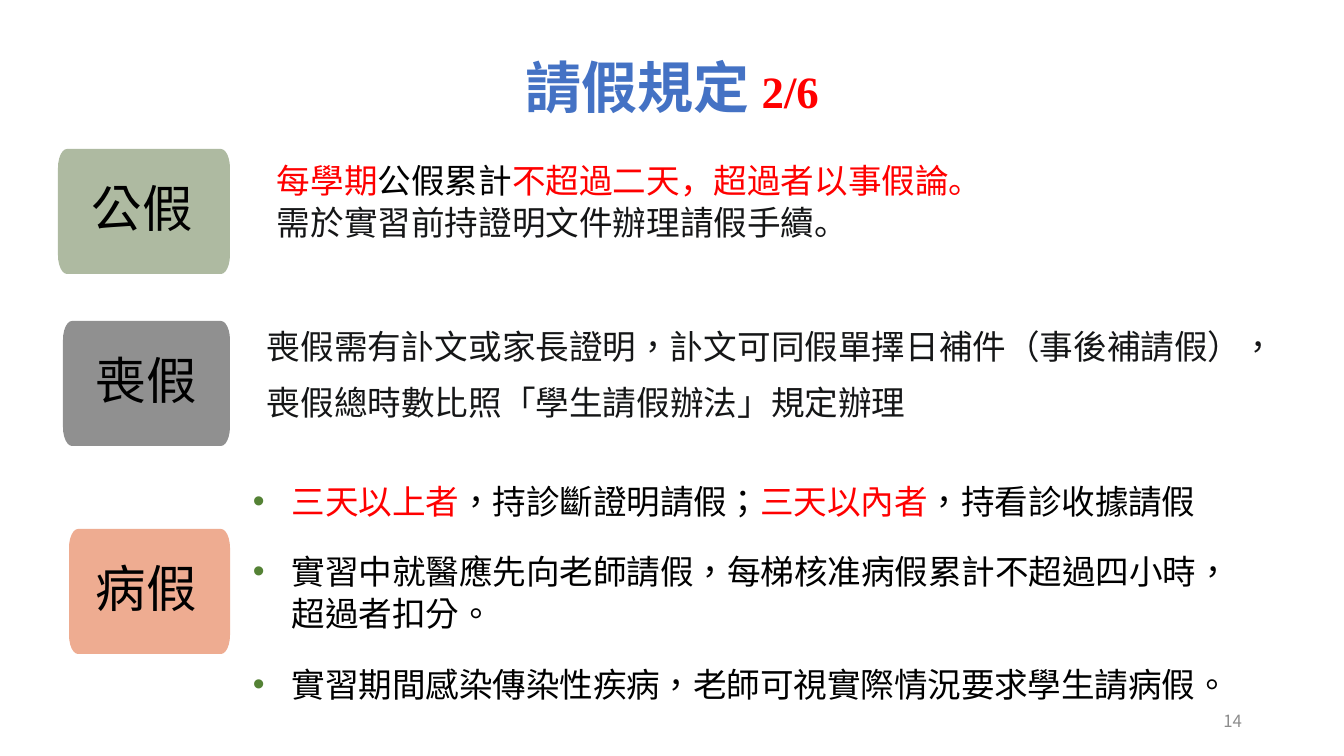
import math

from lxml import etree
from pptx import Presentation
from pptx.dml.color import RGBColor
from pptx.enum import lang, text
from pptx.oxml import ns
from pptx.util import Pt

BLACK = RGBColor(0x00, 0x00, 0x00)
INK = RGBColor(0x15, 0x16, 0x17)
RED = RGBColor(0xFF, 0x00, 0x00)
BLUE = RGBColor(0x44, 0x72, 0xC4)
GREEN = RGBColor(0x54, 0x82, 0x35)
SAGE = RGBColor(0xAE, 0xBA, 0xA1)
GRAY = RGBColor(0x90, 0x90, 0x90)
PEACH = RGBColor(0xEE, 0xAC, 0x91)
PALE = RGBColor(0x8C, 0x8C, 0x8C)
SANS = "Noto Sans CJK SC"
SERIF = "Times New Roman"
TAIWAN = lang.MSO_LANGUAGE_ID.TRADITIONAL_CHINESE
MAINLAND = lang.MSO_LANGUAGE_ID.SIMPLIFIED_CHINESE


class LeaveSlide:
    """Draws the parts of the leave rules slide in pixel units."""

    def __init__(self, presentation):
        presentation.slide_width = self.px(1344)
        presentation.slide_height = self.px(756)
        self.slide = presentation.slides.add_slide(presentation.slide_layouts[6])

    def px(self, length):
        return round(length * 914400 / 100.8)

    def box(self, left, top, width, height, inset=(0, 0)):
        shape = self.slide.shapes.add_textbox(*map(self.px, (left, top, width, height)))
        frame = shape.text_frame
        frame.word_wrap = True
        frame.margin_left = frame.margin_right = self.px(inset[0])
        frame.margin_top = frame.margin_bottom = self.px(inset[1])
        return frame

    def run(self, paragraph, words, size, color, name=SANS, spacing=0, language=TAIWAN):
        run = paragraph.add_run()
        run.text = words
        run.font.size = Pt(size)
        run.font.color.rgb = color
        run.font.name = name
        run.font.language_id = language
        properties = run.font._element
        etree.SubElement(properties, ns.qn("a:ea"), typeface=SANS)
        if spacing:
            properties.set("spc", str(spacing))
        return run

    def paragraphs(self, frame, rows, before, **style):
        for index, row in enumerate(rows):
            paragraph = frame.add_paragraph() if index else frame.paragraphs[0]
            if index:
                paragraph.space_before = Pt(before)
            for words, color in row:
                self.run(paragraph, words, 24, color, **style)

    def bullet(self, paragraph, color):
        properties = paragraph._p.get_or_add_pPr()
        properties.set("marL", str(self.px(39)))
        properties.set("indent", str(-self.px(39)))
        fill = etree.SubElement(properties, ns.qn("a:buClr"))
        etree.SubElement(fill, ns.qn("a:srgbClr"), val=str(color))
        etree.SubElement(properties, ns.qn("a:buFont"), typeface="Arial")
        etree.SubElement(properties, ns.qn("a:buChar"), char="•")

    def title(self, words, part):
        paragraph = self.box(216, 48, 912, 160).paragraphs[0]
        paragraph.alignment = text.PP_ALIGN.CENTER
        paragraph.line_spacing = 0.9
        paragraph._p.get_or_add_pPr().set("indent", str(-self.px(35)))
        for run in (self.run(paragraph, words + " ", 50, BLUE),
                    self.run(paragraph, part, 40, RED, SERIF)):
            run.font.bold = True
            run.font._element.set("cap", "small")

    def badge(self, words, left, top, color, label_left, name=SANS):
        right, bottom, radius_x, radius_y = 230, top + 125, 9, 19
        corners = ((right - radius_x, top + radius_y), (right - radius_x, bottom - radius_y),
                   (left + radius_x, bottom - radius_y), (left + radius_x, top + radius_y))
        points = []
        for quarter, (x, y) in enumerate(corners):
            for step in range(7):
                angle = math.pi / 2 * (quarter - 1 + step / 6)
                points.append((self.px(x + radius_x * math.cos(angle)),
                               self.px(y + radius_y * math.sin(angle))))
        builder = self.slide.shapes.build_freeform(*points[0])
        builder.add_line_segments(points[1:], close=True)
        shape = builder.convert_to_shape()
        shape.shadow.inherit = False
        shape.fill.solid()
        shape.fill.fore_color.rgb = color
        shape.line.fill.background()
        frame = self.box(label_left, top + 28, 120, 67)
        self.run(frame.paragraphs[0], words, 36, BLACK, name, -20)

    def rules(self, rows):
        frame = self.box(243, 474, 996, 234, (10, 5))
        self.paragraphs(frame, rows, 20.4, spacing=-10)
        for paragraph in frame.paragraphs:
            self.bullet(paragraph, GREEN)
            paragraph.alignment = text.PP_ALIGN.JUSTIFY
            paragraph.line_spacing = Pt(30)

    def number(self, words):
        frame = self.box(950, 701, 302, 40, (10, 5))
        frame.vertical_anchor = text.MSO_ANCHOR.MIDDLE
        frame.paragraphs[0].alignment = text.PP_ALIGN.RIGHT
        self.run(frame.paragraphs[0], words, 12, PALE)


def main():
    presentation = Presentation()
    page = LeaveSlide(presentation)
    page.title("請假規定", "2/6")
    page.badge("公假", 58, 149, SAGE, 92)
    page.badge("喪假", 63, 321, GRAY, 96)
    page.badge("病假", 69, 529, PEACH, 96, SERIF)
    page.paragraphs(page.box(277, 160, 764, 85), [
        [("每學期", RED), ("公假累計", BLACK), ("不超過二天，超過者以事假論。", RED)],
        [("需於實習前持證明文件辦理請假手續。", INK)],
    ], 1, language=MAINLAND)
    funeral = page.box(267, 310, 1022, 109)
    page.paragraphs(funeral, [[(
        "喪假需有訃文或家長證明，訃文可同假單擇日補件（事後補請假），"
        "喪假總時數比照「學生請假辦法」規定辦理", INK)]], 0)
    funeral.paragraphs[0].line_spacing = Pt(40)
    page.rules([
        [("三天以上者", RED), ("，持診斷證明請假；", BLACK),
         ("三天以內者", RED), ("，持看診收據請假", BLACK)],
        [("實習中就醫應先向老師請假，每梯核准病假累計不超過四小時，超過者扣分。", BLACK)],
        [("實習期間感染傳染性疾病，老師可視實際情況要求學生請病假。", BLACK)],
    ])
    page.number("14")
    presentation.save("out.pptx")


if __name__ == "__main__":
    main()
